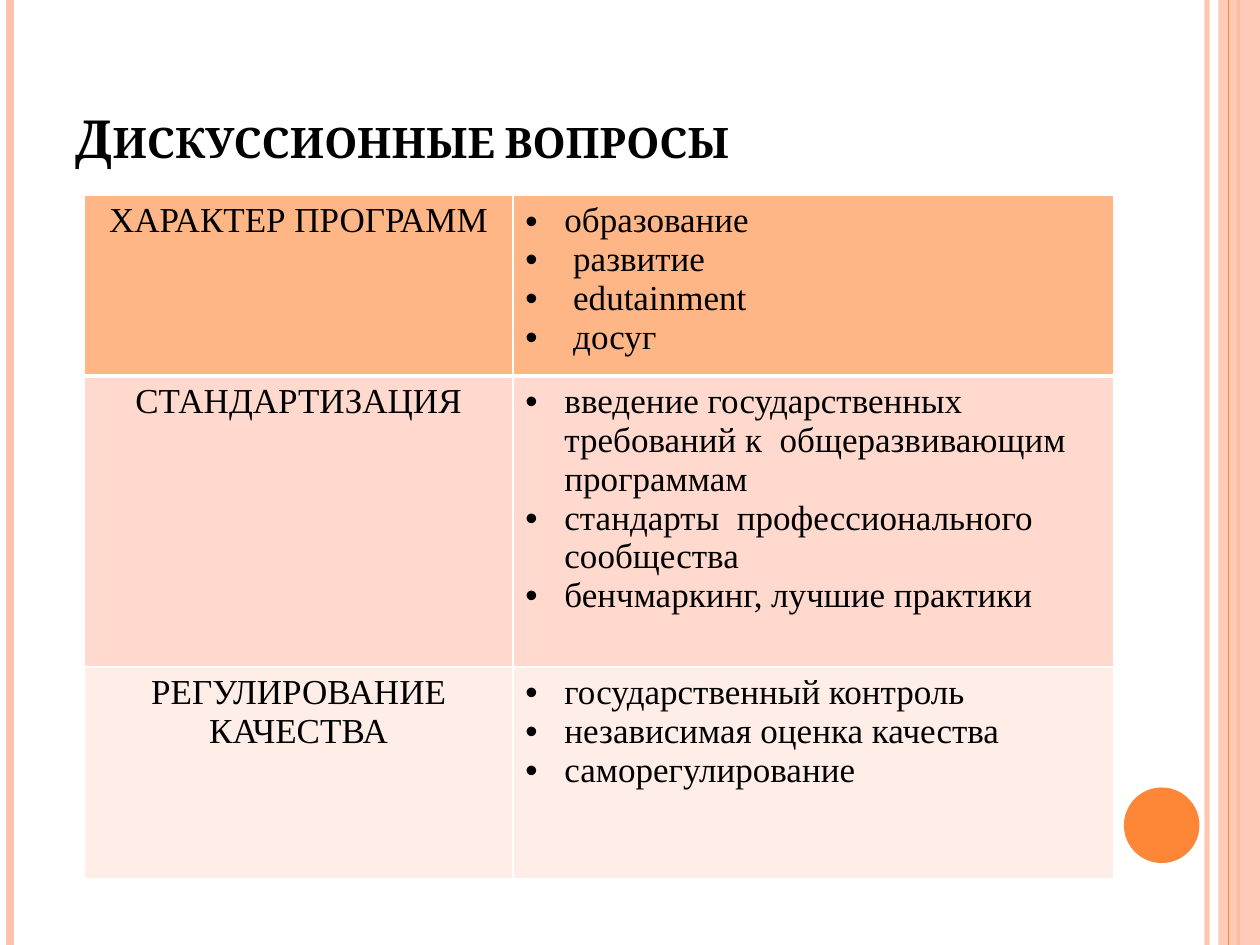
import pptx
import pptx.util
import pptx.dml.color
import pptx.enum.shapes
import pptx.enum.text
import pptx.oxml
import pptx.oxml.ns
import lxml.etree

Inches = pptx.util.Inches
Pt = pptx.util.Pt
qn = pptx.oxml.ns.qn

COLOURS = {
    "text": "000000",
    "orange": "FE8637",
    "peach": "FEC3AE",
    "border": "FFFFFF",
    "header": "FEB687",
    "band": "FFD9CE",
    "pale": "FFEDE8",
}

TOPICS = [
    ("ХАРАКТЕР ПРОГРАММ", ["образование", " развитие", " edutainment", " досуг"], "header", 1.36),
    ("СТАНДАРТИЗАЦИЯ", [
        "введение государственных требований к  общеразвивающим программам",
        "стандарты  профессионального сообщества",
        "бенчмаркинг, лучшие практики",
    ], "band", 2.31),
    ("РЕГУЛИРОВАНИЕ КАЧЕСТВА", [
        "государственный контроль",
        "независимая оценка качества",
        "саморегулирование",
    ], "pale", 1.68),
]


def colour(name):
    return pptx.dml.color.RGBColor.from_string(COLOURS[name])


def set_alpha(element, percent):
    tint = element.find(".//" + qn("a:srgbClr"))
    lxml.etree.SubElement(tint, qn("a:alpha"), val=str(percent * 1000))


def add_stripe(page, x, width, name, alpha=None):
    stripe = page.shapes.add_connector(
        pptx.enum.shapes.MSO_CONNECTOR.STRAIGHT, Inches(x), Inches(0), Inches(x), Inches(7.5))
    stripe.line.color.rgb = colour(name)
    stripe.line.width = Pt(width)
    properties = stripe._element.spPr
    if alpha:
        set_alpha(properties, alpha)
    lxml.etree.SubElement(properties, qn("a:effectLst"))


def add_filled_shape(page, kind, left, top, width, height, name, alpha=None):
    shape = page.shapes.add_shape(kind, Inches(left), Inches(top), Inches(width), Inches(height))
    shape.shadow.inherit = False
    shape.fill.solid()
    shape.fill.fore_color.rgb = colour(name)
    shape.line.fill.background()
    if alpha:
        set_alpha(shape._element.spPr, alpha)


def add_span(para, text, font, size):
    span = para.add_run()
    span.text = text
    span.font.name = font
    span.font.size = Pt(size)
    span.font.color.rgb = colour("text")
    return span


def add_title(page, text):
    box = page.shapes.add_textbox(Inches(0.5), Inches(0.3), Inches(8.17), Inches(1.09))
    box.text_frame.word_wrap = True
    box.text_frame.vertical_anchor = pptx.enum.text.MSO_ANCHOR.BOTTOM
    span = add_span(box.text_frame.paragraphs[0], text, "Cambria", 30)
    span.font.bold = True
    span.font._element.set("cap", "small")


def add_bullet(para):
    properties = para._p.get_or_add_pPr()
    properties.set("marL", str(Inches(0.31)))
    properties.set("indent", str(-Inches(0.31)))
    lxml.etree.SubElement(properties, qn("a:buFont"), typeface="Arial")
    lxml.etree.SubElement(properties, qn("a:buChar"), char="•")


def set_borders(cell, widths):
    properties = cell._tc.get_or_add_tcPr()
    for position, (side, width) in enumerate(widths.items()):
        border = lxml.etree.Element(qn("a:" + side), w=str(Pt(width)))
        fill = lxml.etree.SubElement(border, qn("a:solidFill"))
        lxml.etree.SubElement(fill, qn("a:srgbClr"), val=COLOURS["border"])
        properties.insert(position, border)


def fill_cell(cell, lines, fill, bulleted, top, bottom):
    cell.fill.solid()
    cell.fill.fore_color.rgb = colour(fill)
    set_borders(cell, {"lnL": 1, "lnR": 1, "lnT": top, "lnB": bottom})
    frame = cell.text_frame
    for number, line in enumerate(lines):
        para = frame.add_paragraph() if number else frame.paragraphs[0]
        if bulleted:
            add_bullet(para)
        else:
            para.alignment = pptx.enum.text.PP_ALIGN.CENTER
        add_span(para, line, "Times New Roman", 20)


def add_topic_table(page):
    height = sum(topic[3] for topic in TOPICS)
    table = page.shapes.add_table(
        len(TOPICS), 2, Inches(0.67), Inches(1.55), Inches(8.17), Inches(height)).table
    for column, width in zip(table.columns, (3.4, 4.77)):
        column.width = Inches(width)
    for number, (topic, points, fill, row_height) in enumerate(TOPICS):
        table.rows[number].height = Inches(row_height)
        top = 3 if number == 1 else 1
        bottom = 3 if number == 0 else 1
        fill_cell(table.cell(number, 0), [topic], fill, False, top, bottom)
        fill_cell(table.cell(number, 1), points, fill, True, top, bottom)


def main():
    deck = pptx.Presentation()
    deck.slide_width = Inches(10)
    deck.slide_height = Inches(7.5)
    page = deck.slides.add_slide(deck.slide_layouts[6])
    shapes = pptx.enum.shapes.MSO_SHAPE

    add_stripe(page, 9.58, 3, "peach", 93)
    add_stripe(page, 0.08, 4.5, "peach")
    add_stripe(page, 9.83, 1.5, "orange")
    add_filled_shape(page, shapes.RECTANGLE, 9.67, 0, 0.33, 7.5, "peach", 87)
    add_stripe(page, 9.75, 0.75, "orange")
    add_filled_shape(page, shapes.OVAL, 8.92, 6.25, 0.6, 0.6, "orange")
    add_title(page, "Дискуссионные вопросы")
    add_topic_table(page)
    deck.save("out.pptx")


if __name__ == "__main__":
    main()
